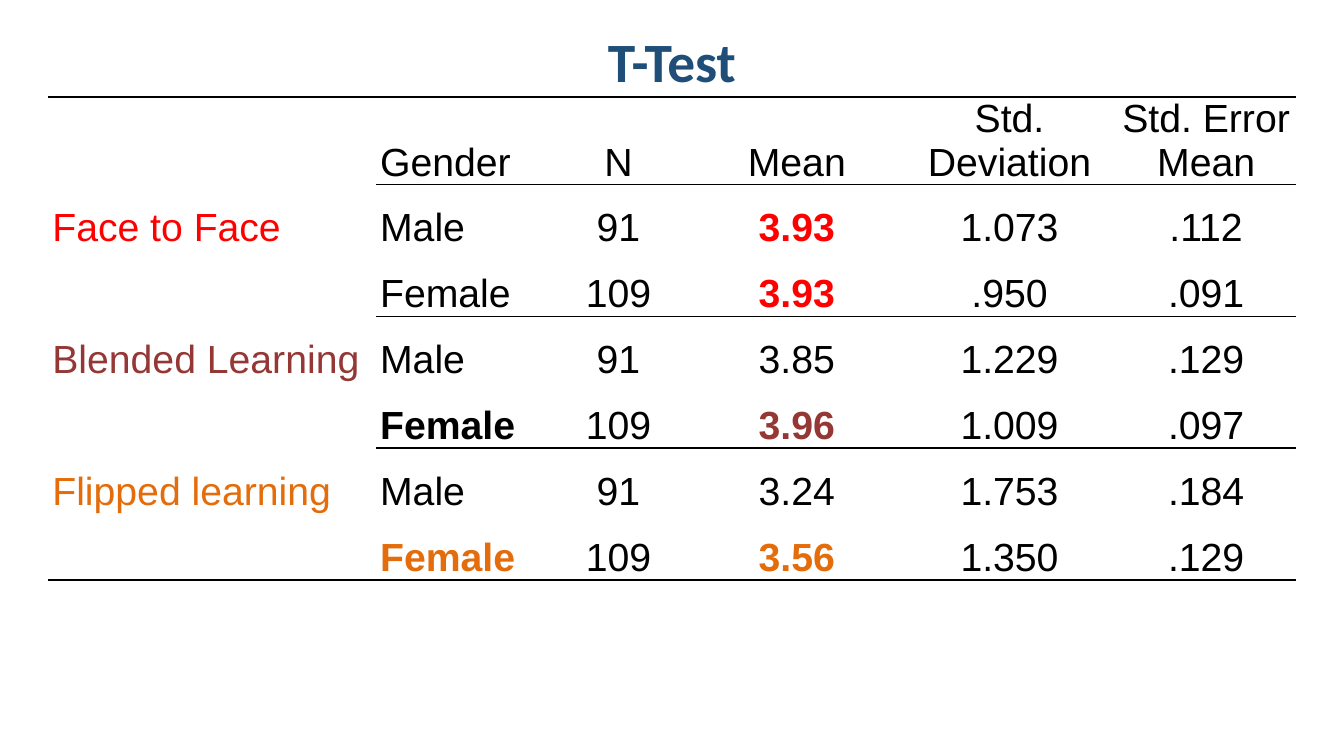
from lxml.etree import SubElement
from pptx import Presentation
from pptx.dml.color import RGBColor
from pptx.enum.text import MSO_ANCHOR as Anchor, MSO_AUTO_SIZE as AutoSize, PP_ALIGN as Align
from pptx.oxml.ns import qn
from pptx.util import Cm, Pt

BLACK = RGBColor(0x00, 0x00, 0x00)
WHITE = RGBColor(0xFF, 0xFF, 0xFF)
NAVY = RGBColor(0x1F, 0x4E, 0x79)
RED = RGBColor(0xFF, 0x00, 0x00)
MAROON = RGBColor(0x95, 0x37, 0x35)
ORANGE = RGBColor(0xE4, 0x6C, 0x0A)

NO_STYLE_NO_GRID = "{2D5ABB26-0587-4C30-8999-92F81FD0307C}"
COLUMN_WIDTHS = [8.26, 4.29, 3.63, 5.36, 5.36, 4.55]
HEADER_HEIGHT = 2.21
ROW_HEIGHT = 1.66
THIN, THICK = 1, 1.5

HEADERS = ["", "Gender", "N", "Mean", "Std. Deviation", "Std. Error Mean"]
GROUPS = [
    ("Face to Face", RED,
     ["Male", "91", "3.93", "1.073", ".112"],
     ["Female", "109", "3.93", ".950", ".091"]),
    ("Blended Learning", MAROON,
     ["Male", "91", "3.85", "1.229", ".129"],
     ["Female", "109", "3.96", "1.009", ".097"]),
    ("Flipped learning", ORANGE,
     ["Male", "91", "3.24", "1.753", ".184"],
     ["Female", "109", "3.56", "1.350", ".129"]),
]
HIGHLIGHTS = {(1, 3): RED, (2, 3): RED, (4, 1): BLACK, (4, 3): MAROON,
              (6, 1): ORANGE, (6, 3): ORANGE}


def write_text(frame, text, *, font="Arial", size=28, color=BLACK, bold=False,
               align=Align.LEFT, spacing=1.5):
    paragraph = frame.paragraphs[0]
    paragraph.alignment = align
    paragraph.line_spacing = spacing
    run = paragraph.add_run()
    run.text = text
    run.font.name = font
    run.font.size = Pt(size)
    run.font.bold = bold
    run.font.color.rgb = color


def add_border(cell, side, width):
    properties = cell._tc.get_or_add_tcPr()
    line = SubElement(properties, qn(f"a:ln{side}"), w=str(Pt(width)))
    fill = SubElement(line, qn("a:solidFill"))
    SubElement(fill, qn("a:srgbClr"), val=str(BLACK))


def fill_cell(cell, text, *, anchor=Anchor.TOP, **text_format):
    cell.margin_left = cell.margin_right = Cm(0.1)
    cell.margin_top = cell.margin_bottom = 0
    cell.vertical_anchor = anchor
    cell.fill.solid()
    cell.fill.fore_color.rgb = WHITE
    write_text(cell.text_frame, text, **text_format)


def set_title(slide, text):
    title = slide.shapes.title
    title.left, title.top, title.width, title.height = Cm(2.33), Cm(0.85), Cm(29.21), Cm(1.55)
    frame = title.text_frame
    frame.auto_size = AutoSize.NONE
    frame.vertical_anchor = Anchor.MIDDLE
    frame.margin_top = frame.margin_bottom = 0
    write_text(frame, text, font="Calibri", size=39.6, color=NAVY, bold=True,
               align=Align.CENTER, spacing=0.9)


def add_empty_table(slide):
    row_count = 1 + 2 * len(GROUPS)
    height = HEADER_HEIGHT + ROW_HEIGHT * (row_count - 1)
    frame = slide.shapes.add_table(row_count, len(HEADERS), Cm(1.22), Cm(2.44),
                                   Cm(sum(COLUMN_WIDTHS)), Cm(height))
    table = frame.table
    table.first_row = table.horz_banding = False
    table._tbl.tblPr.find(qn("a:tableStyleId")).text = NO_STYLE_NO_GRID
    for column, width in zip(table.columns, COLUMN_WIDTHS):
        column.width = Cm(width)
    for index, row in enumerate(table.rows):
        row.height = Cm(ROW_HEIGHT if index else HEADER_HEIGHT)
    return table


def add_rules(table):
    last = len(table.rows) - 1
    for column in range(len(HEADERS)):
        add_border(table.cell(0, column), "T", THICK)
        if column:
            for row in range(0, last, 2):
                add_border(table.cell(row, column), "B", THIN)
        add_border(table.cell(last, column), "B", THICK)
    add_border(table.cell(last - 1, 0), "B", THICK)


def fill_header(table):
    for column, text in enumerate(HEADERS):
        if text:
            fill_cell(table.cell(0, column), text, anchor=Anchor.BOTTOM,
                      align=Align.LEFT if column == 1 else Align.CENTER,
                      spacing=1.0 if column > 3 else 1.5)


def fill_group(table, first_row, name, color, *records):
    name_cell = table.cell(first_row, 0)
    name_cell.merge(table.cell(first_row + 1, 0))
    fill_cell(name_cell, name, color=color)
    for row, record in enumerate(records, first_row):
        for column, text in enumerate(record, 1):
            fill_cell(table.cell(row, column), text,
                      anchor=Anchor.TOP if column == 1 else Anchor.MIDDLE,
                      align=Align.LEFT if column == 1 else Align.CENTER,
                      color=HIGHLIGHTS.get((row, column), BLACK),
                      bold=(row, column) in HIGHLIGHTS)


def main():
    presentation = Presentation()
    presentation.slide_width = Cm(33.87)
    presentation.slide_height = Cm(19.05)
    slide = presentation.slides.add_slide(presentation.slide_layouts[5])
    set_title(slide, "T-Test")
    table = add_empty_table(slide)
    add_rules(table)
    fill_header(table)
    for index, group in enumerate(GROUPS):
        fill_group(table, 1 + 2 * index, *group)
    presentation.save("out.pptx")


if __name__ == "__main__":
    main()
